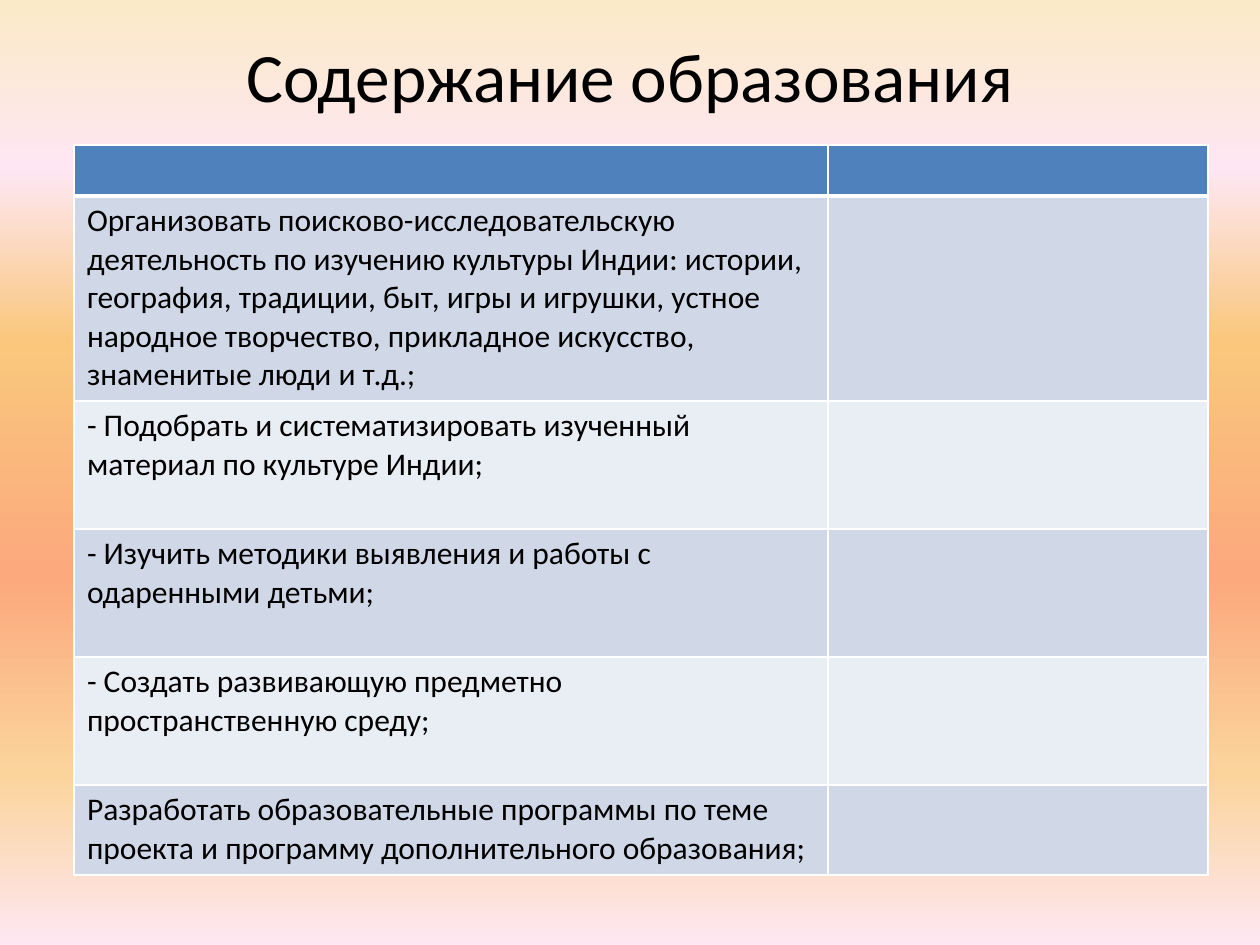
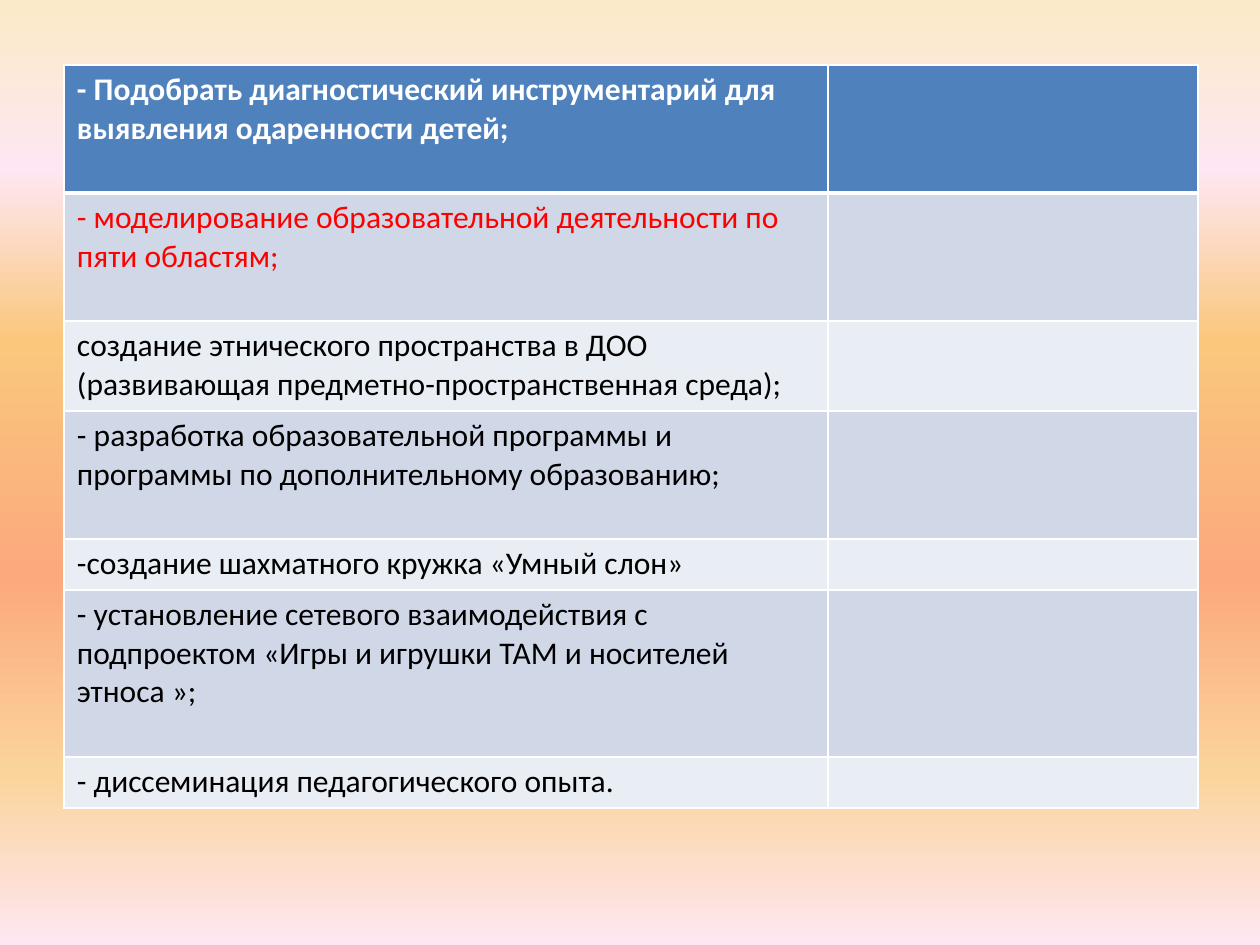
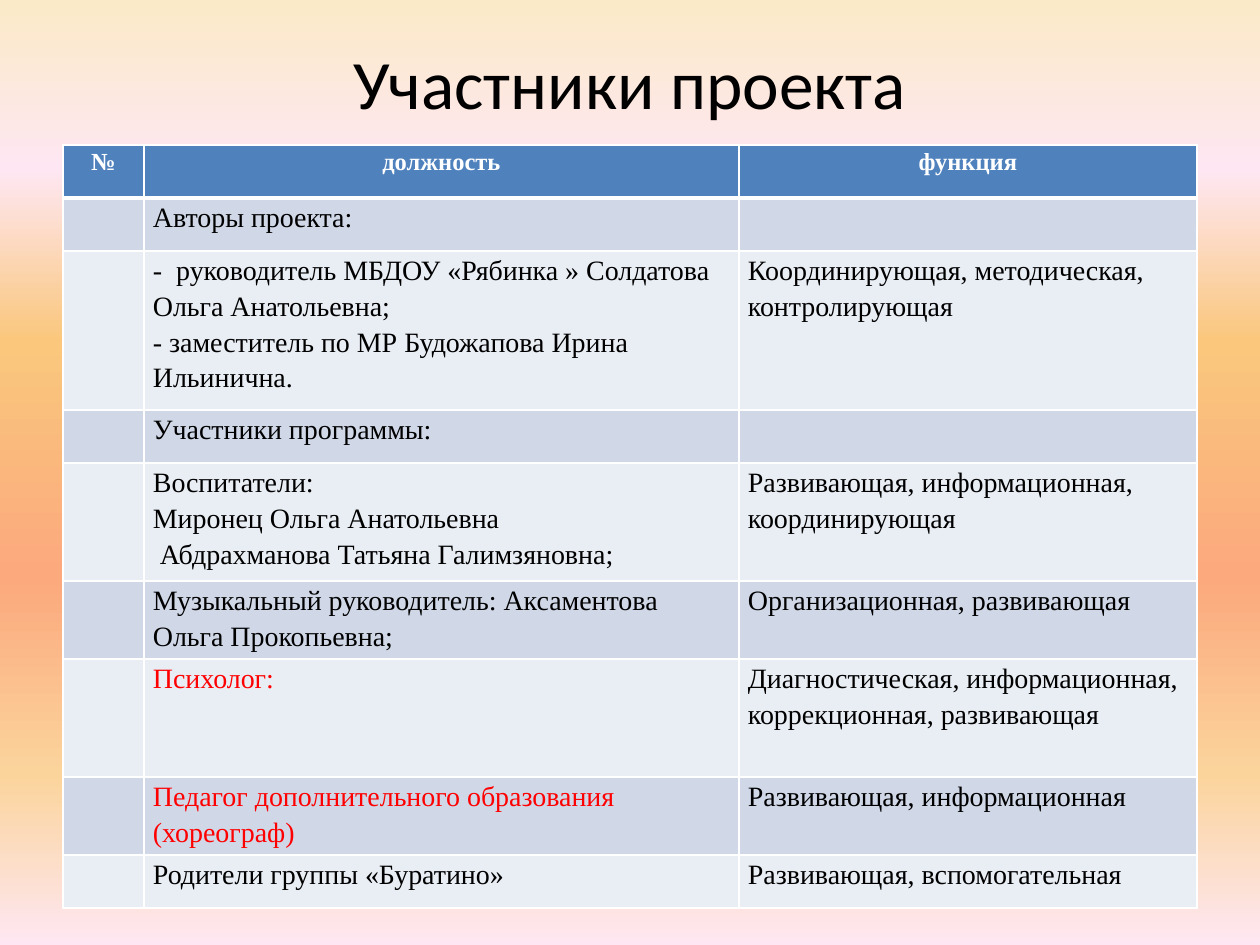
from dataclasses import dataclass

from lxml import etree
from pptx import Presentation
from pptx.dml.color import RGBColor
from pptx.enum.text import MSO_ANCHOR, PP_ALIGN
from pptx.oxml.ns import qn
from pptx.util import Emu, Pt

PX = 914400 // 126
CENTER, LEFT = PP_ALIGN.CENTER, PP_ALIGN.LEFT
MIDDLE = MSO_ANCHOR.MIDDLE


@dataclass(frozen=True)
class Theme:
    ink: str = "000000"
    paper: str = "FFFFFF"
    accent: str = "FF0000"
    header: str = "4F81BD"
    bands: tuple = ("D0D8E8", "E9EDF4")
    backdrop: tuple = ((0, "FBEAC7"), (18, "FEE7F2"), (36, "FAC77D"),
                       (61, "FBA97D"), (82, "FBD49C"), (100, "FEE7F2"))
    title_font: str = "Calibri"
    title_size: float = 39.6
    thin: int = 1
    thick: int = 3


@dataclass(frozen=True)
class TableStyle:
    font: str
    header_size: int
    body_size: int
    header_align: int
    spacing: float
    margin_x: int
    margin_y: int


THEME = Theme()
GOALS = TableStyle("Calibri", 18, 18, LEFT, 1.0, 13, 6)
ROSTER = TableStyle("Times New Roman", 14, 16, CENTER, 1.15, 9, 0)

# "accented" holds the (row, column) pairs set in the accent colour.
SLIDES = [
    {
        "title": "Содержание образования", "title_height": 74,
        "style": GOALS, "origin": (74, 145),
        "columns": (754, 380), "heights": (51, 205, 128, 128, 128, 90),
        "accented": set(),
        "rows": [
            ("", ""),
            ("Организовать поисково-исследовательскую деятельность по изучению "
             "культуры Индии: истории, география, традиции, быт, игры и игрушки, "
             "устное народное творчество, прикладное искусство, знаменитые люди и т.д.;", ""),
            ("- Подобрать и систематизировать изученный материал по культуре Индии;", ""),
            ("- Изучить методики выявления и работы с одаренными детьми;", ""),
            ("- Создать развивающую предметно пространственную среду;", ""),
            ("Разработать образовательные программы по теме проекта и программу "
             "дополнительного образования;", ""),
        ],
    },
    {
        "style": GOALS, "origin": (64, 65),
        "columns": (764, 370), "heights": (128, 128, 90, 128, 51, 167, 51),
        "accented": {(1, 0)},
        "rows": [
            ("- Подобрать диагностический инструментарий для выявления одаренности детей;", ""),
            ("- моделирование образовательной деятельности по пяти областям;", ""),
            ("создание этнического пространства в ДОО (развивающая "
             "предметно-пространственная среда);", ""),
            ("- разработка образовательной программы и программы по "
             "дополнительному образованию;", ""),
            ("-создание шахматного кружка «Умный слон»", ""),
            ("- установление сетевого взаимодействия с подпроектом "
             "«Игры и игрушки ТАМ и носителей этноса »;", ""),
            ("- диссеминация педагогического опыта.", ""),
        ],
    },
    {
        "title": "Участники проекта", "title_height": 87,
        "style": ROSTER, "origin": (63, 145),
        "columns": (81, 595, 458), "heights": (53, 53, 159, 53, 118, 78, 118, 78, 53),
        "accented": {(6, 1), (7, 1)},
        "rows": [
            ("№", "должность", "функция"),
            ("", "Авторы проекта:", ""),
            ("", "-  руководитель МБДОУ «Рябинка » Солдатова Ольга Анатольевна;\n"
                 "- заместитель по МР Будожапова Ирина Ильинична.",
             "Координирующая, методическая, контролирующая"),
            ("", "Участники программы:", ""),
            ("", "Воспитатели:\nМиронец Ольга Анатольевна\n Абдрахманова Татьяна Галимзяновна;",
             "Развивающая, информационная, координирующая"),
            ("", "Музыкальный руководитель: Аксаментова Ольга Прокопьевна;",
             "Организационная, развивающая"),
            ("", "Психолог:", "Диагностическая, информационная, коррекционная, развивающая"),
            ("", "Педагог дополнительного образования (хореограф)",
             "Развивающая, информационная"),
            ("", "Родители группы «Буратино»", "Развивающая, вспомогательная"),
        ],
    },
]


def px(*lengths):
    return [Emu(length * PX) for length in lengths]


def add_run(paragraph, text, font, size, color, bold=False):
    run = paragraph.add_run()
    run.text = text
    run.font.name, run.font.size, run.font.bold = font, Pt(size), bold
    run.font.color.rgb = RGBColor.from_string(color)


def paint_backdrop(master):
    """Give the master the gradient that every slide inherits."""
    fill = master.background.fill
    fill.gradient()
    fill.gradient_angle = 270
    stops = master.element.find(".//" + qn("a:gsLst"))
    for stop in list(stops):
        stops.remove(stop)
    for percent, color in THEME.backdrop:
        stop = etree.SubElement(stops, qn("a:gs"), pos=str(percent * 1000))
        etree.SubElement(stop, qn("a:srgbClr"), val=color)


def add_title(slide, title, height):
    frame = slide.shapes.add_textbox(*px(63, 38, 1134, height)).text_frame
    frame.word_wrap = True
    frame.vertical_anchor = MIDDLE
    paragraph = frame.paragraphs[0]
    paragraph.alignment = CENTER
    add_run(paragraph, title, THEME.title_font, THEME.title_size, THEME.ink)


def set_borders(cell, row):
    """Draw white cell edges, with a heavy rule between header and body."""
    widths = {"L": THEME.thin, "R": THEME.thin,
              "T": THEME.thick if row == 1 else THEME.thin,
              "B": THEME.thick if row == 0 else THEME.thin}
    properties = cell._tc.get_or_add_tcPr()
    for position, (side, width) in enumerate(widths.items()):
        line = etree.Element(qn("a:ln" + side), w=str(Pt(width)))
        solid = etree.SubElement(line, qn("a:solidFill"))
        etree.SubElement(solid, qn("a:srgbClr"), val=THEME.paper)
        properties.insert(position, line)


def fill_cell(cell, text, row, style, accented):
    header = row == 0
    cell.fill.solid()
    cell.fill.fore_color.rgb = RGBColor.from_string(
        THEME.header if header else THEME.bands[(row - 1) % 2])
    set_borders(cell, row)
    if not text:
        return
    cell.margin_left, cell.margin_right = px(style.margin_x, style.margin_x)
    cell.margin_top, cell.margin_bottom = px(style.margin_y, style.margin_y)
    color = THEME.paper if header else THEME.accent if accented else THEME.ink
    size = style.header_size if header else style.body_size
    frame = cell.text_frame
    for index, line in enumerate(text.split("\n")):
        paragraph = frame.add_paragraph() if index else frame.paragraphs[0]
        paragraph.alignment = style.header_align if header else LEFT
        paragraph.line_spacing = style.spacing
        add_run(paragraph, line, style.font, size, color, bold=header)


def add_grid(slide, content):
    columns, heights = content["columns"], content["heights"]
    table = slide.shapes.add_table(
        len(heights), len(columns),
        *px(*content["origin"], sum(columns), sum(heights))).table
    for column, width in zip(table.columns, px(*columns)):
        column.width = width
    for row, height in zip(table.rows, px(*heights)):
        row.height = height
    for r, texts in enumerate(content["rows"]):
        for c, text in enumerate(texts):
            fill_cell(table.cell(r, c), text, r, content["style"],
                      (r, c) in content["accented"])


def main():
    deck = Presentation()
    deck.slide_width, deck.slide_height = px(1260, 945)
    paint_backdrop(deck.slide_master)
    blank = deck.slide_layouts[6]
    for content in SLIDES:
        slide = deck.slides.add_slide(blank)
        if "title" in content:
            add_title(slide, content["title"], content["title_height"])
        add_grid(slide, content)
    deck.save("out.pptx")


if __name__ == "__main__":
    main()
